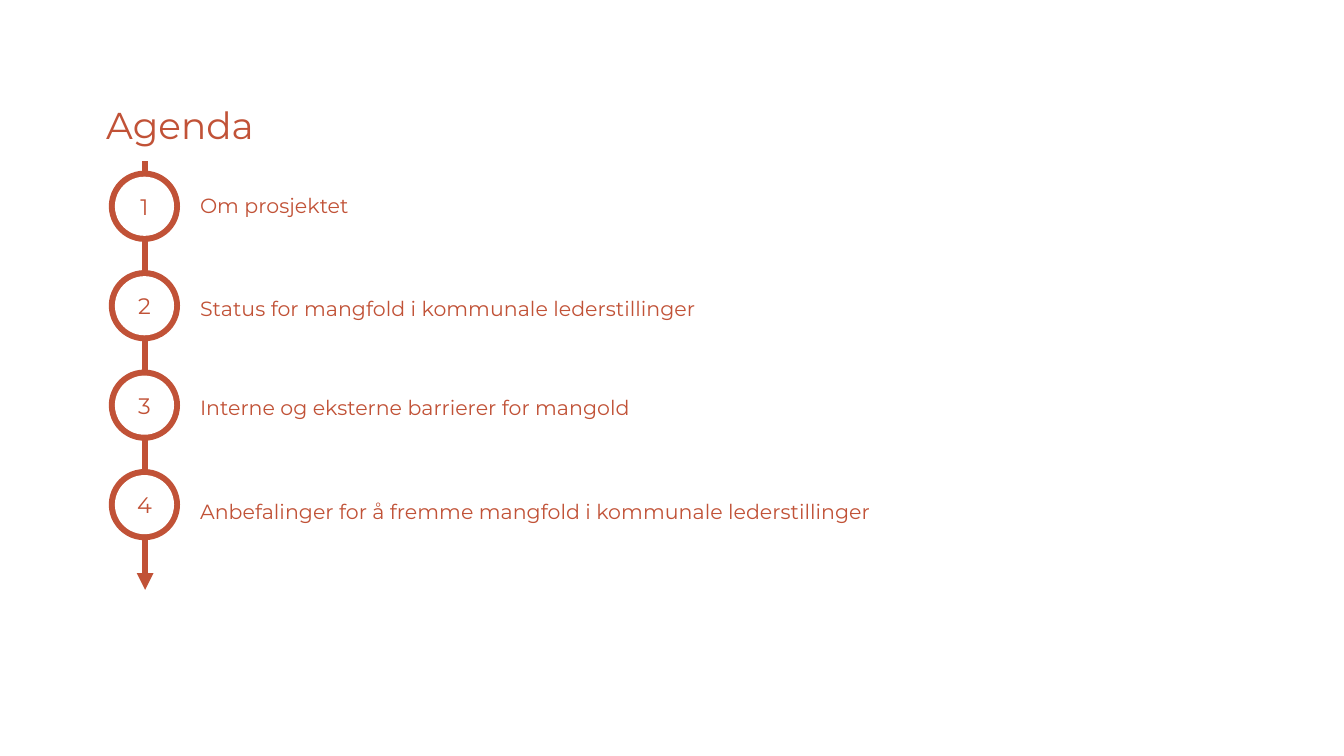
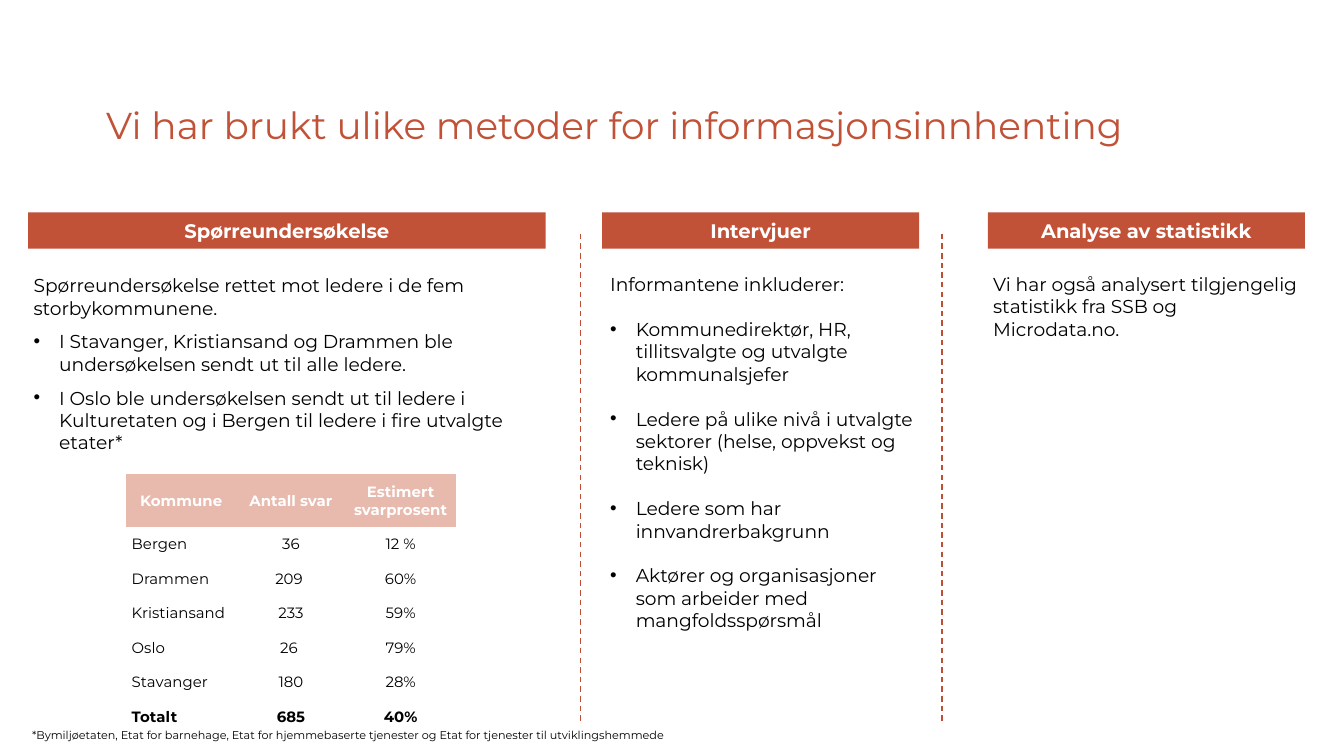
from lxml import etree
from pptx import Presentation
from pptx.dml.color import RGBColor
from pptx.enum import dml, shapes, text
from pptx.oxml import ns
from pptx.util import Inches, Pt

RUST = RGBColor(0xC1, 0x52, 0x37)
DIVIDER = RGBColor(0xC0, 0x4E, 0x32)
ROSE = RGBColor(0xE8, 0xB9, 0xAD)
BLACK = RGBColor(0, 0, 0)
WHITE = RGBColor(0xFF, 0xFF, 0xFF)
FONT = "Montserrat"
CENTER = text.PP_ALIGN.CENTER
LEFT = text.PP_ALIGN.LEFT
MIDDLE = text.MSO_ANCHOR.MIDDLE
NO_STYLE_NO_GRID = "{2D5ABB26-0587-4C30-8999-92F81FD0307C}"

SLIDE_WIDTH = 10
SLIDE_HEIGHT = SLIDE_WIDTH * 9 / 16
TITLE_ONLY, TWO_CONTENT = 5, 3
BAND_TOP, BAND_HEIGHT = 1.58, 0.27

AGENDA = [  # item, top of its label
    ("Om prosjektet", 1.39),
    ("Status for mangfold i kommunale lederstillinger", 2.15),
    ("Interne og eksterne barrierer for mangold", 2.89),
    ("Anbefalinger for å fremme mangfold i kommunale lederstillinger", 3.66),
]
SURVEY = ("Spørreundersøkelse rettet mot ledere i de fem storbykommunene.", [
    "I Stavanger, Kristiansand og Drammen ble undersøkelsen sendt ut til alle ledere.",
    "I Oslo ble undersøkelsen sendt ut til ledere i Kulturetaten og i Bergen til ledere "
    "i fire utvalgte etater*",
])
INTERVIEWS = ("Informantene inkluderer:", [
    "Kommunedirektør, HR, tillitsvalgte og utvalgte kommunalsjefer",
    "Ledere på ulike nivå i utvalgte sektorer (helse, oppvekst og teknisk)",
    "Ledere som har innvandrerbakgrunn",
    "Aktører og organisasjoner som arbeider med mangfoldsspørsmål",
])
STATISTICS = ("Vi har også analysert tilgjengelig statistikk fra SSB og Microdata.no.", [])
RESPONSES = [
    ("Kommune", "Antall svar", "Estimert svarprosent"),
    ("Bergen", "36", "12 %"),
    ("Drammen", "209 ", "60%"),
    ("Kristiansand", "233", "59%"),
    ("Oslo", "26 ", "79%"),
    ("Stavanger", "180", "28%"),
    ("Totalt", "685", "40%"),
]
FOOTNOTE = ("*Bymiljøetaten, Etat for barnehage, Etat for hjemmebaserte tjenester "
            "og Etat for tjenester til utviklingshemmede")


def write(paragraph, words, size, color, bold=False, align=LEFT):
    paragraph.alignment = align
    run = paragraph.add_run()
    run.text = words
    run.font.name = FONT
    run.font.size = Pt(size)
    run.font.bold = bold
    run.font.color.rgb = color


def place(shape, left, top, width, height):
    shape.left, shape.top = Inches(left), Inches(top)
    shape.width, shape.height = Inches(width), Inches(height)


def set_insets(frame, inset):
    frame.margin_left = frame.margin_right = Inches(inset)
    frame.margin_top = frame.margin_bottom = Inches(inset)


def add_textbox(slide, left, top, width, height):
    box = slide.shapes.add_textbox(*map(Inches, (left, top, width, height)))
    box.text_frame.word_wrap = True
    return box


def add_filled(parent, kind, left, top, width, height, color):
    shape = parent.shapes.add_shape(kind, *map(Inches, (left, top, width, height)))
    shape.shadow.inherit = False
    shape.fill.solid()
    shape.fill.fore_color.rgb = color
    shape.line.fill.background()
    shape.text_frame.vertical_anchor = MIDDLE
    return shape


def add_vertical_line(slide, left, top, bottom, color, weight):
    line = slide.shapes.add_connector(
        shapes.MSO_CONNECTOR.STRAIGHT, *map(Inches, (left, top, left, bottom)))
    line.line.color.rgb = color
    line.line.width = Pt(weight)
    etree.SubElement(line._element.spPr, ns.qn("a:effectLst"))
    return line


def add_slide(presentation, layout, title):
    slide = presentation.slides.add_slide(presentation.slide_layouts[layout])
    place(slide.shapes.title, 0.79, 0.73, 8.82, 0.43)
    frame = slide.shapes.title.text_frame
    set_insets(frame, 0)
    frame.vertical_anchor = text.MSO_ANCHOR.TOP
    frame.auto_size = text.MSO_AUTO_SIZE.NONE
    frame.paragraphs[0].line_spacing = Pt(26)
    write(frame.paragraphs[0], title, 20, RUST)
    return slide


def add_numbered_ring(slide, number, left, top):
    size, inner = 0.53, 0.44
    rim = (size - inner) / 2
    group = slide.shapes.add_group_shape()
    oval = shapes.MSO_SHAPE.OVAL
    add_filled(group, oval, left, top, size, size, RUST)
    disc = add_filled(group, oval, left + rim, top + rim, inner, inner, WHITE)
    write(disc.text_frame.paragraphs[0], str(number), 12, RUST, align=CENTER)


def build_agenda(presentation):
    slide = add_slide(presentation, TITLE_ONLY, "Agenda")
    arrow = add_vertical_line(slide, 1.08, 1.2, 4.39, RUST, 3)
    etree.SubElement(arrow.line._get_or_add_ln(), ns.qn("a:tailEnd"), type="triangle")
    for index, (item, label_top) in enumerate(AGENDA):
        add_numbered_ring(slide, index + 1, 0.81, 1.27 + 0.74 * index)
        label = add_textbox(slide, 1.39, label_top, 6.17, 0.29)
        write(label.text_frame.paragraphs[0], item, 11, RUST)


def set_bullet(paragraph, indent=0.0):
    """Hang a bullet by the indent, or clear the bullet when it is zero."""
    properties = paragraph._p.get_or_add_pPr()
    properties.set("marL", str(Inches(indent)))
    properties.set("indent", str(-Inches(indent)))
    if indent:
        etree.SubElement(properties, ns.qn("a:buFont"), typeface="Arial")
        etree.SubElement(properties, ns.qn("a:buChar"), char="•")
    else:
        etree.SubElement(properties, ns.qn("a:buNone"))


def fill_column(shape, intro, bullets, gap):
    frame = shape.text_frame
    set_insets(frame, 0.04)
    frame.auto_size = text.MSO_AUTO_SIZE.NONE
    for index, words in enumerate([intro, *bullets]):
        paragraph = frame.add_paragraph() if index else frame.paragraphs[0]
        set_bullet(paragraph, 0.19 if index else 0.0)
        paragraph.space_before = Pt(gap if index else 0)
        write(paragraph, words, 10, BLACK)


def add_band(slide, heading, left, width):
    band = add_filled(slide, shapes.MSO_SHAPE.RECTANGLE, left, BAND_TOP, width,
                      BAND_HEIGHT, RUST)
    set_insets(band.text_frame, 0.04)
    write(band.text_frame.paragraphs[0], heading, 10.5, WHITE, True, CENTER)


def add_response_table(slide, left, top, width, height):
    rows, columns = len(RESPONSES), len(RESPONSES[0])
    table = slide.shapes.add_table(
        rows, columns, *map(Inches, (left, top, width, height))).table
    table.horz_banding = False
    table._tbl.tblPr.find(ns.qn("a:tableStyleId")).text = NO_STYLE_NO_GRID
    for r, values in enumerate(RESPONSES):
        header = r == 0
        table.rows[r].height = Inches(0.16)  # rows grow to fit their text
        for c, value in enumerate(values):
            cell = table.cell(r, c)
            cell.vertical_anchor = MIDDLE
            cell.margin_left = cell.margin_right = Inches(0.04)
            cell.margin_top = cell.margin_bottom = Inches(0.06)
            if header:
                cell.fill.solid()
                cell.fill.fore_color.rgb = ROSE
            else:
                cell.fill.background()
            write(cell.text_frame.paragraphs[0], value, 8, WHITE if header else BLACK,
                  r in (0, rows - 1), CENTER if header or c else LEFT)


def build_methods(presentation):
    slide = add_slide(presentation, TWO_CONTENT,
                      "Vi har brukt ulike metoder for informasjonsinnhenting")
    survey, interviews = slide.placeholders[1], slide.placeholders[2]
    place(survey, 0.21, 2, 3.85, 3.06)
    place(interviews, 4.5, 1.99, 2.36, 2.97)
    statistics = add_textbox(slide, 7.35, 1.99, 2.36, 2.97)
    fill_column(survey, *SURVEY, gap=6)
    fill_column(interviews, *INTERVIEWS, gap=12)
    fill_column(statistics, *STATISTICS, gap=0)

    for heading, left, width in (("Spørreundersøkelse", 0.21, 3.85),
                                 ("Intervjuer", 4.48, 2.36),
                                 ("Analyse av statistikk", 7.35, 2.36)):
        add_band(slide, heading, left, width)
    add_response_table(slide, 0.94, 3.53, 2.45, 1.89)
    for left in (4.32, 7.01):
        divider = add_vertical_line(slide, left, 1.74, 5.38, DIVIDER, 0.75)
        divider.line.dash_style = dml.MSO_LINE.DASH

    footnote = add_textbox(slide, 0.14, 5.38, 9.23, 0.19).text_frame.paragraphs[0]
    footnote.line_spacing = 0.9
    write(footnote, FOOTNOTE, 6, BLACK)


def main():
    presentation = Presentation()
    presentation.slide_width = Inches(SLIDE_WIDTH)
    presentation.slide_height = Inches(SLIDE_HEIGHT)
    build_agenda(presentation)
    build_methods(presentation)
    presentation.save("out.pptx")


if __name__ == "__main__":
    main()
